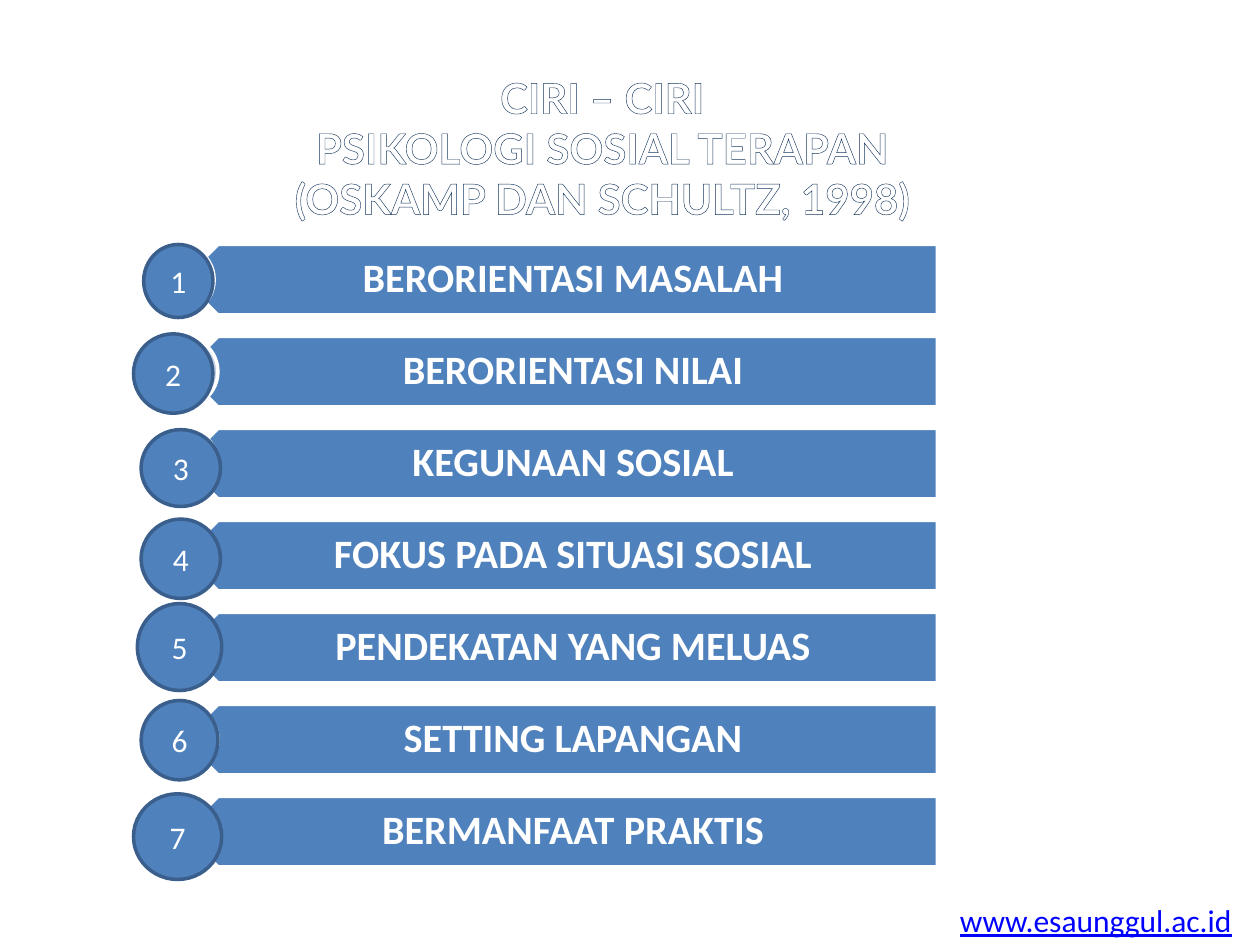
from dataclasses import dataclass

from lxml import etree
from pptx import Presentation
from pptx.dml.color import RGBColor as Rgb
from pptx.enum.shapes import MSO_SHAPE as Kind
from pptx.enum.text import MSO_ANCHOR as Anchor, PP_ALIGN as Align
from pptx.oxml import parse_xml
from pptx.oxml.ns import nsdecls
from pptx.util import Inches, Pt


@dataclass(frozen=True)
class Theme:
    white: str = "FFFFFF"
    blue: str = "4F81BD"
    edge: str = "3A5F8C"
    pale: str = "C2CDE1"
    navy: str = "17375E"
    link: str = "0000FF"
    body: str = "Calibri"
    head: str = "Lato"
    title: int = 24
    label: int = 23
    small: int = 18
    line: int = 2


THEME = Theme()
TITLE = ["CIRI – CIRI", "PSIKOLOGI SOSIAL TERAPAN", "(OSKAMP DAN SCHULTZ, 1998)"]
# Label and the box of its number disc
ROWS = [
    ("BERORIENTASI MASALAH", (1.14, 1.94, 0.55, 0.58)),
    ("BERORIENTASI NILAI", (1.06, 2.65, 0.63, 0.63)),
    ("KEGUNAAN SOSIAL", (1.12, 3.41, 0.63, 0.61)),
    ("FOKUS PADA SITUASI SOSIAL", (1.12, 4.12, 0.63, 0.63)),
    ("PENDEKATAN YANG MELUAS", (1.09, 4.79, 0.67, 0.69)),
    ("SETTING LAPANGAN", (1.12, 5.56, 0.61, 0.63)),
    ("BERMANFAAT PRAKTIS", (1.06, 6.3, 0.7, 0.68)),
]


def write(frame, lines, size, color, align=Align.CENTER, **font):
    """Fill a text frame with one paragraph for each line."""
    look = {"name": THEME.body, "size": Pt(size), **font}
    for i, line in enumerate(lines):
        para = frame.paragraphs[0] if i == 0 else frame.add_paragraph()
        para.alignment = align
        run = para.add_run()
        run.text = line
        for key, value in look.items():
            setattr(run.font, key, value)
        run.font.color.rgb = Rgb.from_string(color)


def add_text(slide, box, lines, size, color, frame=None, **font):
    """Add a text box; frame holds text frame settings."""
    text = slide.shapes.add_textbox(*map(Inches, box)).text_frame
    for key, value in {"word_wrap": True, **(frame or {})}.items():
        setattr(text, key, value)
    write(text, lines, size, color, **font)
    return text


def add_form(slide, kind, box, fill, edge):
    form = slide.shapes.add_shape(kind, *map(Inches, box))
    form.shadow.inherit = False
    form.fill.solid()
    form.fill.fore_color.rgb = Rgb.from_string(fill)
    form.line.color.rgb = Rgb.from_string(edge)
    form.line.width = Pt(THEME.line)
    return form


def add_title(slide, box):
    """Add the heading in white letters with a thin dark outline."""
    text = add_text(slide, box, TITLE, THEME.title, THEME.white,
                    name=THEME.head, bold=True)
    for para in text.paragraphs:
        props = para.runs[0].font._element
        line = parse_xml(f'<a:ln {nsdecls("a")} w="{Pt(0.75)}"/>')
        fill = etree.SubElement(line, line.tag.replace("}ln", "}solidFill"))
        etree.SubElement(fill, line.tag.replace("}ln", "}srgbClr"), val=THEME.navy)
        props.insert(0, line)


def add_bar(slide, box, label, dot):
    """Add an arrow bar, its label and the pale disc at its tip."""
    left, top, width, high = box
    bar = add_form(slide, Kind.PENTAGON, box, THEME.blue, THEME.white)
    bar.rotation = 180
    frame = {
        "vertical_anchor": Anchor.MIDDLE,
        "margin_left": Inches(0.25), "margin_right": Inches(0.18),
        "margin_top": Inches(0.1), "margin_bottom": Inches(0.1),
    }
    shift = 0.14
    text = add_text(slide, (left + shift, top, width - shift, high), [label],
                    THEME.label, THEME.white, frame, bold=True)
    text.paragraphs[0].line_spacing = 0.9
    add_form(slide, Kind.OVAL, (dot, top, high, high), THEME.pale, THEME.white)


def add_disc(slide, box, num):
    disc = add_form(slide, Kind.OVAL, box, THEME.blue, THEME.edge)
    disc.text_frame.vertical_anchor = Anchor.MIDDLE
    write(disc.text_frame, [str(num)], THEME.small, THEME.white)


def add_list(slide, box):
    """Stack the bars at an equal step, then lay the numbers on top."""
    left, top, width, high = box
    bar = 0.56
    step = (high - bar) / (len(ROWS) - 1)
    for i, (label, _) in enumerate(ROWS):
        dot = left - (0.28 if i else 0.31)
        add_bar(slide, (left, top + i * step, width, bar), label, dot)
    for num, (_, disc) in enumerate(ROWS, 1):
        add_disc(slide, disc, num)


def main():
    deck = Presentation()
    deck.slide_width, deck.slide_height = Inches(10), Inches(7.5)
    slide = deck.slides.add_slide(deck.slide_layouts[6])
    add_text(slide, (7.52, 7.1, 2.38, 0.4), ["www.esaunggul.ac.id"], THEME.small,
             THEME.link, {"word_wrap": False}, align=Align.LEFT, underline=True)
    add_title(slide, (0.28, 0.52, 9, 1.31))
    add_list(slide, (1.45, 1.94, 5.99, 4.94))
    deck.save("out.pptx")


if __name__ == "__main__":
    main()
